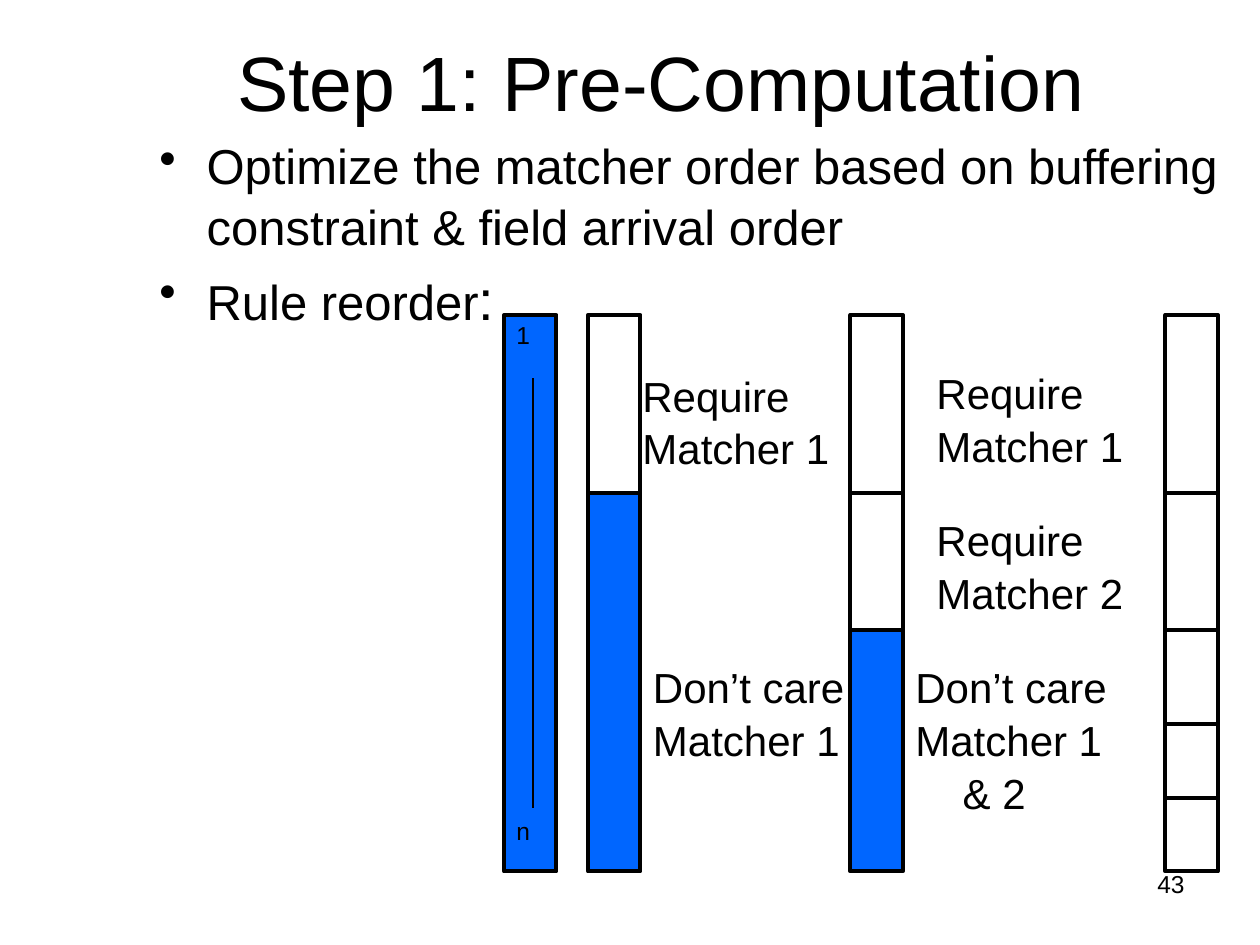
from lxml import etree
from pptx import Presentation
from pptx.dml.color import RGBColor
from pptx.enum.shapes import MSO_CONNECTOR, MSO_SHAPE
from pptx.enum.text import MSO_ANCHOR, PP_ALIGN
from pptx.oxml.ns import qn
from pptx.util import Pt

RECT = MSO_SHAPE.RECTANGLE
LINE = MSO_CONNECTOR.STRAIGHT
LEFT, MID, RIGHT = PP_ALIGN.LEFT, PP_ALIGN.CENTER, PP_ALIGN.RIGHT
TOP, CENTER = MSO_ANCHOR.TOP, MSO_ANCHOR.MIDDLE
BLUE, BLACK = "0066FF", "000000"


def color(code):
    return RGBColor.from_string(code)


def add_text(slide, box, paras, size=24, align=LEFT, anchor=TOP,
             hang=0, bullet=None, gap=0):
    """Each paragraph is a list of (text, size) runs or a plain string."""
    frame = slide.shapes.add_textbox(*map(Pt, box)).text_frame
    frame.word_wrap = True
    frame.vertical_anchor = anchor
    for i, runs in enumerate(paras):
        para = frame.paragraphs[0] if i == 0 else frame.add_paragraph()
        para.alignment = align
        para.line_spacing = 1.05
        if i and gap:
            para.space_before = Pt(gap)
        props = para._p.get_or_add_pPr()
        if hang:
            props.set("marL", str(Pt(hang)))
            props.set("indent", str(-Pt(hang)))
        if bullet:
            etree.SubElement(props, qn("a:buChar")).set("char", bullet)
        for text, points in [(runs, size)] if isinstance(runs, str) else runs:
            run = para.add_run()
            run.text = text
            run.font.name = "Arial"
            run.font.size = Pt(points)
            run.font.color.rgb = color(BLACK)


def add_bar(slide, left, top, width, parts):
    """Stack (height, fill) parts downward from the top."""
    for height, fill in parts:
        part = slide.shapes.add_shape(
            RECT, Pt(left), Pt(top), Pt(width), Pt(height))
        part.shadow.inherit = False
        if fill:
            part.fill.solid()
            part.fill.fore_color.rgb = color(fill)
        else:
            part.fill.background()
        part.line.color.rgb = color(BLACK)
        part.line.width = Pt(2.25)
        top += height


def add_range(slide, left, top, height):
    """Mark the first bar with rules 1 to n."""
    for label, y in (("1", top - 1.5), ("n", top + height - 36)):
        add_text(slide, (left, y, 24, 37), [label], size=14)
    x = Pt(left + 16.5)
    line = slide.shapes.add_connector(
        LINE, x, Pt(top + 36), x, Pt(top + height - 36))
    line.line.color.rgb = color(BLACK)
    line.line.width = Pt(0.75)
    etree.SubElement(line._element.spPr, qn("a:effectLst"))


def add_diagram(slide, left, top, width):
    steps = [102, 78, 54, 42, 42]
    total = sum(steps)
    # Bars: each matcher splits off one more part of the rules
    bars = [
        (0, [(total, BLUE)]),
        (48, [(steps[0], None), (total - steps[0], BLUE)]),
        (198, [(steps[0], None), (steps[1], None), (sum(steps[2:]), BLUE)]),
        (378, [(step, None) for step in steps]),
    ]
    for shift, parts in bars:
        add_bar(slide, left + shift, top, width, parts)
    add_range(slide, left, top, total)

    # Labels beside the parts
    labels = [
        (72, 26.5, "Require", "Matcher 1"),
        (78, 193, "Don’t care", "Matcher 1"),
        (240, 25, "Require", "Matcher 1"),
        (240, 109, "Require", "Matcher 2"),
        (228, 193, "Don’t care", "Matcher 1 & 2"),
    ]
    for x, y, *lines in labels:
        add_text(slide, (left + x, top + y, 126, 59), lines, hang=27)


def main():
    deck = Presentation()
    deck.slide_width, deck.slide_height = Pt(720), Pt(540)
    slide = deck.slides.add_slide(deck.slide_layouts[6])

    # Page number, title and bullets
    add_text(slide, (516, 492, 168, 37), ["43"], size=14, align=RIGHT)
    add_text(slide, (54, 0, 648, 90), ["Step 1: Pre-Computation"],
             size=44, align=MID, anchor=CENTER)
    add_text(slide, (84, 72, 636, 150), [
        "Optimize the matcher order based on buffering "
        "constraint & field arrival order",
        [("Rule reorder", 28), (":", 32)],
    ], size=28, hang=27, bullet="•", gap=3)

    add_diagram(slide, 288, 180, 30)
    deck.save("out.pptx")


if __name__ == "__main__":
    main()
